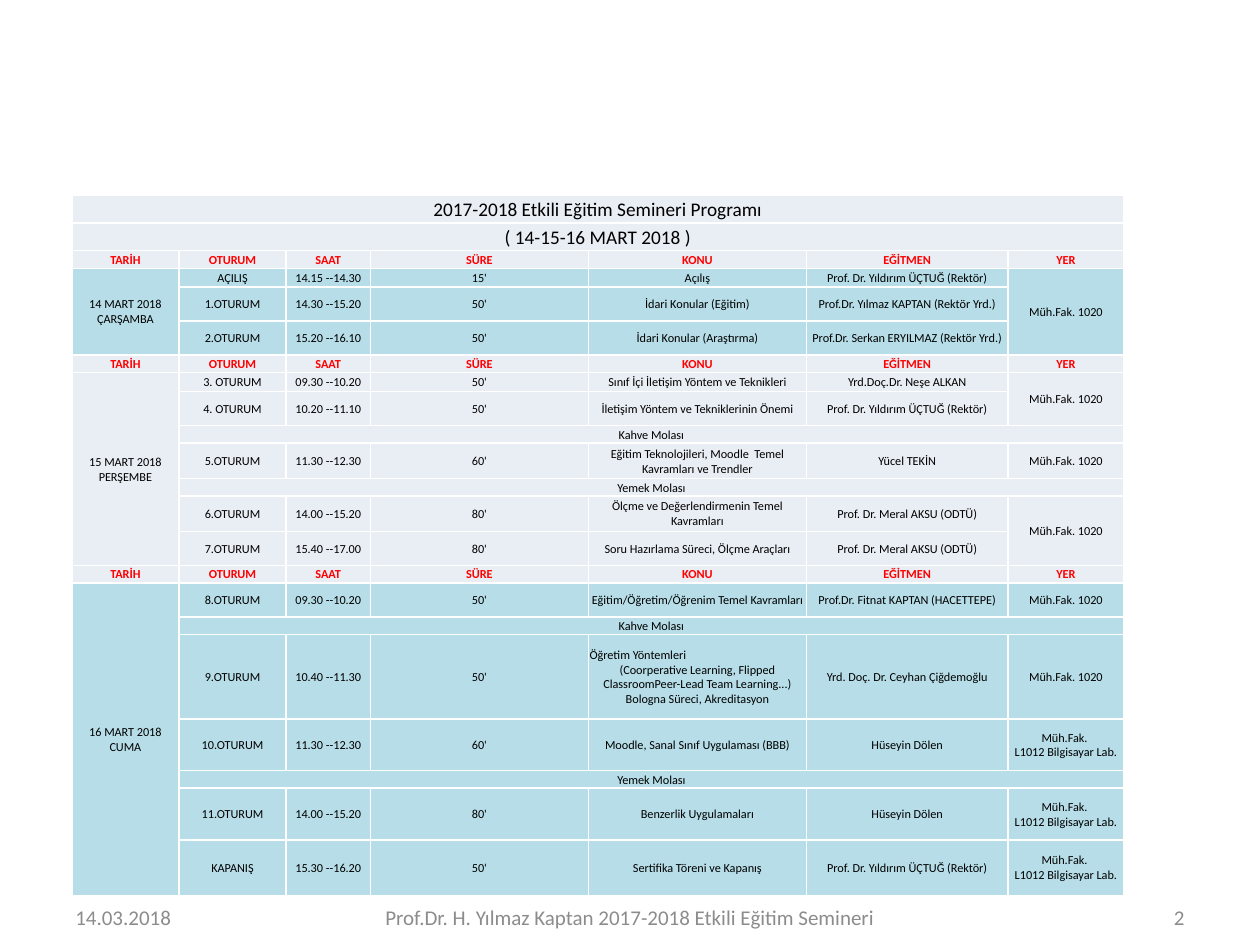
from copy import deepcopy

from lxml.etree import SubElement
from pptx import Presentation
from pptx.dml.color import RGBColor
from pptx.enum.text import MSO_ANCHOR, PP_ALIGN
from pptx.oxml.ns import qn
from pptx.util import Inches, Pt

PALE, BLUE = "E9EDF4", "B7DEE8"
BLACK, RED, GREY, WHITE = "000000", "FF0000", "8C8C8C", "FFFFFF"
COLS = [0.85, 0.85, 0.67, 1.73, 1.73, 1.6, 0.92]
THIN = 0.14  # header and break rows
ROWS = [0.22, 0.22, THIN, 0.15, 0.27, 0.27, THIN, 0.15, 0.27, THIN, 0.28,
        THIN, 0.28, 0.27, THIN, 0.27, THIN, 0.67, 0.41, THIN, 0.41, 0.44]

TITLES = ["2017-2018 Etkili Eğitim Semineri Programı", "( 14-15-16 MART 2018 )"]
HEADS = ["TARİH", "OTURUM", "SAAT", "SÜRE", "KONU", "EĞİTMEN", "YER"]
ROOM = "Müh.Fak. 1020"
LAB = "Müh.Fak. \vL1012 Bilgisayar Lab."
COFFEE, LUNCH = ["Kahve Molası"], ["Yemek Molası"]
RECTOR = "Prof. Dr. Yıldırım ÜÇTUĞ (Rektör)"
AKSU = "Prof. Dr. Meral AKSU (ODTÜ)"
SAME = None  # the room of the row above

DAYS = [
    ("14 MART 2018 ÇARŞAMBA", BLUE, [
        ["AÇILIŞ", "14.15 --14.30", "15'", "Açılış", RECTOR, ROOM],
        ["1.OTURUM", "14.30 --15.20", "50'", "İdari Konular (Eğitim)",
         "Prof.Dr. Yılmaz KAPTAN (Rektör Yrd.)", SAME],
        ["2.OTURUM", "15.20 --16.10", "50'", "İdari Konular (Araştırma)",
         "Prof.Dr. Serkan ERYILMAZ (Rektör Yrd.)", SAME],
    ]),
    ("15 MART 2018 PERŞEMBE", PALE, [
        ["3. OTURUM", "09.30 --10.20", "50'",
         "Sınıf İçi İletişim Yöntem ve Teknikleri",
         "Yrd.Doç.Dr. Neşe ALKAN", ROOM],
        ["4. OTURUM", "10.20 --11.10", "50'",
         "İletişim Yöntem ve Tekniklerinin Önemi", RECTOR, SAME],
        COFFEE,
        ["5.OTURUM", "11.30 --12.30", "60'",
         "Eğitim Teknolojileri, Moodle  Temel Kavramları ve Trendler",
         "Yücel TEKİN", ROOM],
        LUNCH,
        ["6.OTURUM", "14.00 --15.20", "80'",
         "Ölçme ve Değerlendirmenin Temel Kavramları", AKSU, ROOM],
        ["7.OTURUM", "15.40 --17.00", "80'",
         "Soru Hazırlama Süreci, Ölçme Araçları", AKSU, SAME],
    ]),
    ("16 MART 2018 CUMA", BLUE, [
        ["8.OTURUM", "09.30 --10.20", "50'",
         "Eğitim/Öğretim/Öğrenim Temel Kavramları",
         "Prof.Dr. Fitnat KAPTAN (HACETTEPE)", ROOM],
        COFFEE,
        ["9.OTURUM", "10.40 --11.30", "50'",
         "Öğretim Yöntemleri\n(Coorperative Learning, Flipped "
         "ClassroomPeer-Lead Team Learning...)\vBologna Süreci, Akreditasyon",
         "Yrd. Doç. Dr. Ceyhan Çiğdemoğlu", ROOM],
        ["10.OTURUM", "11.30 --12.30", "60'",
         "Moodle, Sanal Sınıf Uygulaması (BBB)", "Hüseyin Dölen", LAB],
        LUNCH,
        ["11.OTURUM", "14.00 --15.20", "80'", "Benzerlik Uygulamaları",
         "Hüseyin Dölen", LAB],
        ["KAPANIŞ", "15.30 --16.20", "50'", "Sertifika Töreni ve Kapanış",
         RECTOR, LAB],
    ]),
]


def paint(color):
    return RGBColor.from_string(color)


def write(frame, text, size, color, align, bold=False):
    frame.text = text
    for para in frame.paragraphs:
        para.alignment = align
        for run in para.runs:
            font = run.font
            font.name, font.size, font.bold = "Calibri", Pt(size), bold
            font.color.rgb = paint(color)
        # Line breaks take the size of the text around them
        for gap in para._p.findall(qn("a:br")):
            gap.append(deepcopy(para.runs[0]._r.rPr))


def edge(cell):
    props = cell._tc.get_or_add_tcPr()
    for side in ("lnL", "lnR", "lnT", "lnB"):
        line = SubElement(props, qn(f"a:{side}"), w=str(Pt(1)))
        fill = SubElement(line, qn("a:solidFill"))
        SubElement(fill, qn("a:srgbClr"), val=WHITE)


def fill_cell(cell, text, fill, size=7, color=BLACK, bold=False):
    cell.fill.solid()
    cell.fill.fore_color.rgb = paint(fill)
    cell.vertical_anchor = MSO_ANCHOR.MIDDLE
    cell.margin_left = cell.margin_right = cell.margin_top = Inches(0.01)
    cell.margin_bottom = 0
    write(cell.text_frame, text, size, color, PP_ALIGN.CENTER, bold)


def add_day(grid, top, date, fill, plan):
    """Fill a header row and the sessions below it; return the next free row."""
    for col, head in enumerate(HEADS):
        fill_cell(grid.cell(top, col), head, PALE, color=RED, bold=True)
    first, last = top + 1, top + len(plan)
    grid.cell(first, 0).merge(grid.cell(last, 0))
    fill_cell(grid.cell(first, 0), date, fill)
    for row, parts in enumerate(plan, first):
        if len(parts) == 1:
            grid.cell(row, 1).merge(grid.cell(row, 6))
        for col, text in enumerate(parts, 1):
            if text is not SAME:
                fill_cell(grid.cell(row, col), text, fill)
        if parts[-1] is not SAME:
            start = row
        elif row == last or plan[row - first + 1][-1] is not SAME:
            grid.cell(start, 6).merge(grid.cell(row, 6))
    return last + 1


def add_plan(slide, left, top, width, height):
    grid = slide.shapes.add_table(
        len(ROWS), len(COLS), Inches(left), Inches(top),
        Inches(width), Inches(height)).table
    grid.first_row = grid.horz_banding = False
    for col, size in zip(grid.columns, COLS):
        col.width = Inches(size)
    for row, size in zip(grid.rows, ROWS):
        row.height = Inches(size)
    for cell in grid.iter_cells():
        edge(cell)
    for row, title in enumerate(TITLES):
        grid.cell(row, 0).merge(grid.cell(row, 6))
        fill_cell(grid.cell(row, 0), title, PALE, size=11)
    top = len(TITLES)
    for date, fill, plan in DAYS:
        top = add_day(grid, top, date, fill, plan)
    # The first line of a two-part topic starts at the left edge
    for cell in grid.iter_cells():
        paras = cell.text_frame.paragraphs
        if len(paras) > 1:
            paras[0].alignment = PP_ALIGN.LEFT


def add_foot(slide, top, height):
    for left, width, text, align in [
        (0.5, 1.8, "14.03.2018", PP_ALIGN.LEFT),
        (2.4, 5.2, "Prof.Dr. H. Yılmaz Kaptan "
         "2017-2018 Etkili Eğitim Semineri", PP_ALIGN.CENTER),
        (7.7, 1.8, "2", PP_ALIGN.RIGHT),
    ]:
        box = slide.shapes.add_textbox(
            Inches(left), Inches(top), Inches(width), Inches(height))
        frame = box.text_frame
        frame.word_wrap = True
        frame.margin_top = frame.margin_bottom = 0
        frame.vertical_anchor = MSO_ANCHOR.MIDDLE
        write(frame, text, 12, GREY, align)


def main():
    deck = Presentation()
    deck.slide_width, deck.slide_height = Inches(10), Inches(7.5)
    slide = deck.slides.add_slide(deck.slide_layouts[6])
    add_plan(slide, 0.57, 1.55, sum(COLS), sum(ROWS))
    add_foot(slide, 7.16, 0.24)
    deck.save("out.pptx")


if __name__ == "__main__":
    main()
